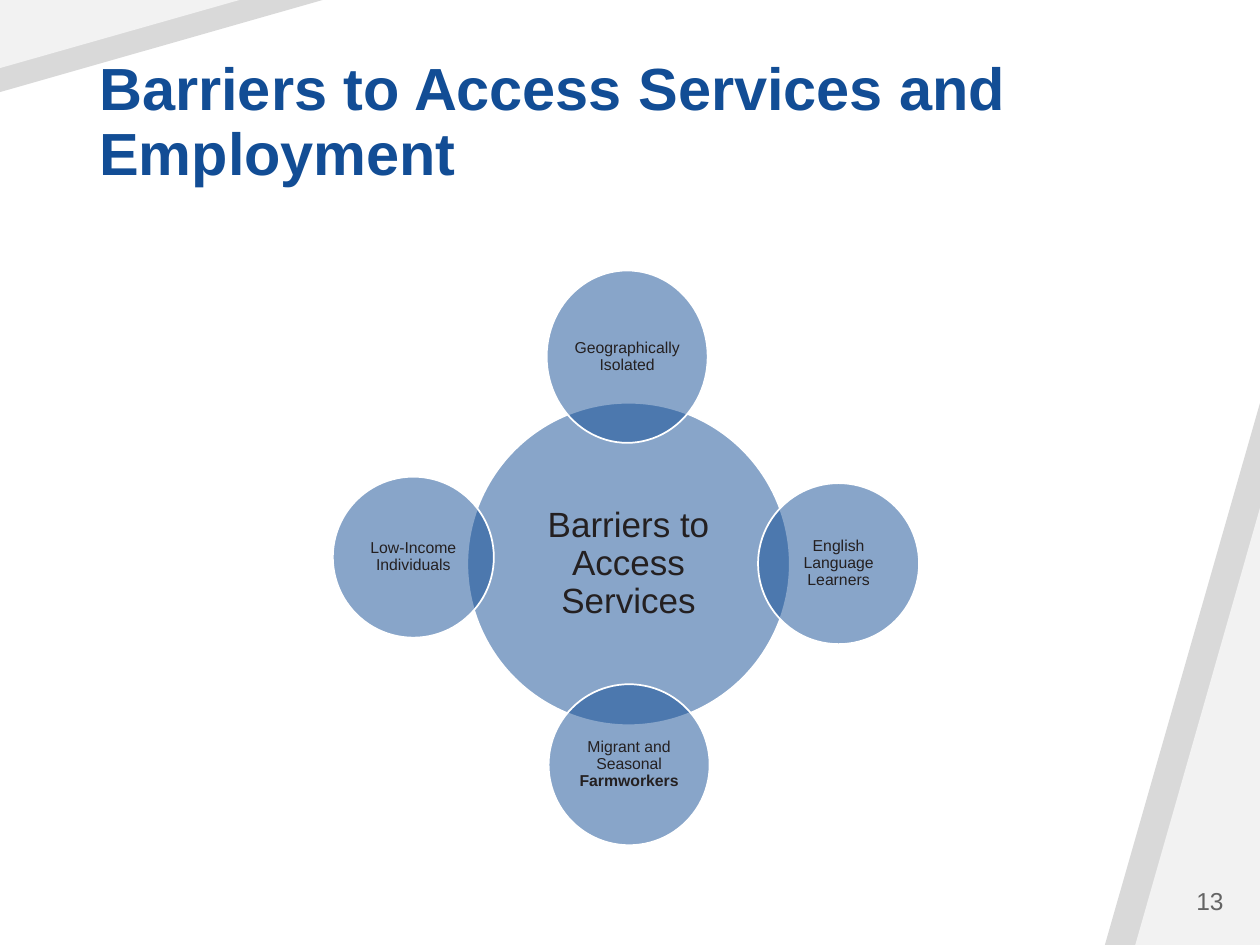
from lxml import etree
from pptx import Presentation
from pptx.dml.color import RGBColor
from pptx.enum.shapes import MSO_SHAPE
from pptx.enum.text import MSO_ANCHOR, PP_ALIGN
from pptx.oxml.ns import qn
from pptx.util import Pt

TRIANGLE, ELLIPSE = MSO_SHAPE.ISOSCELES_TRIANGLE, MSO_SHAPE.OVAL
MIDDLE, BOTTOM = MSO_ANCHOR.MIDDLE, MSO_ANCHOR.BOTTOM
LEFT, CENTER, RIGHT = PP_ALIGN.LEFT, PP_ALIGN.CENTER, PP_ALIGN.RIGHT


class Theme:
    font = "Arial"
    blue, ink, gray = "124D95", "242021", "646464"
    white, band, corner = "FFFFFF", "D9D9D9", "F2F2F2"
    title_size, hub_size, label_size, number_size = 34, 20, 9, 14
    circle_alpha = 50
    outline = 1


PAGE_WIDTH, PAGE_HEIGHT = 720, 540
TITLE = "Barriers to Access Services and Employment"
TITLE_BOX = (49.7, 28.1, 626.4, 82.8)
NUMBER = "13"
NUMBER_BOX = (605.5, 500.4, 100.8, 28.8)

BOTTOM_CORNERS = [(88.6, 309.6, Theme.band), (71.3, 249.8, Theme.corner)]
TOP_CORNERS = [(184.3, 52.6, Theme.band), (136.8, 38.9, Theme.corner)]

HUB = ([("Barriers to Access Services", False)], 359.2, 322.3, 184.3, 184.3)
SATELLITES = [
    ([("Geographically Isolated", False)], 358.4, 203.8, 92, 98.5),
    ([("English Language Learners", False)], 479.2, 322.1, 92, 92),
    ([("Migrant and Seasonal ", False), ("Farmworkers", True)], 359.5, 437, 92, 92),
    ([("Low-Income Individuals", False)], 236.2, 318.4, 92, 92),
]
LABEL_SHARE = 0.71


def color(value):
    return RGBColor.from_string(value)


def add_shape(page, kind, box, fill):
    shape = page.shapes.add_shape(kind, *map(Pt, box))
    shape.shadow.inherit = False
    shape.fill.solid()
    shape.fill.fore_color.rgb = color(fill)
    shape.line.fill.background()
    return shape


def add_corner(page, box, fill, rotation=0):
    triangle = add_shape(page, TRIANGLE, box, fill)
    triangle.adjustments[0] = 1
    triangle.rotation = rotation


def add_text(page, box, spans, size, ink, align, anchor, inset=None, spacing=None):
    text_box = page.shapes.add_textbox(*map(Pt, box))
    frame = text_box.text_frame
    frame.word_wrap = True
    frame.vertical_anchor = anchor
    if inset is not None:
        frame.margin_left = frame.margin_right = Pt(inset)
        frame.margin_top = frame.margin_bottom = Pt(inset)
    para = frame.paragraphs[0]
    para.alignment = align
    para.line_spacing = spacing
    for text, bold in spans:
        span = para.add_run()
        span.text = text
        span.font.name = Theme.font
        span.font.size = Pt(size)
        span.font.bold = bold
        span.font.color.rgb = color(ink)


def centered(x, y, width, height):
    return x - width / 2, y - height / 2, width, height


def add_circle(page, spans, x, y, width, height, size, inset):
    circle = add_shape(page, ELLIPSE, centered(x, y, width, height), Theme.blue)
    circle.line.color.rgb = color(Theme.white)
    circle.line.width = Pt(Theme.outline)
    fill = circle.fill._xPr.find(qn("a:solidFill"))
    etree.SubElement(fill[0], qn("a:alpha"), val=str(Theme.circle_alpha * 1000))
    label_box = centered(x, y, width * LABEL_SHARE, height * LABEL_SHARE)
    add_text(page, label_box, spans, size, Theme.ink, CENTER, MIDDLE, inset, 0.9)


def main():
    deck = Presentation()
    deck.slide_width, deck.slide_height = Pt(PAGE_WIDTH), Pt(PAGE_HEIGHT)
    page = deck.slides.add_slide(deck.slide_layouts[6])

    for width, height, fill in BOTTOM_CORNERS:
        box = (PAGE_WIDTH - width, PAGE_HEIGHT - height, width, height)
        add_corner(page, box, fill)
    for width, height, fill in TOP_CORNERS:
        add_corner(page, (0, 0, width, height), fill, 180)

    add_text(page, TITLE_BOX, [(TITLE, True)], Theme.title_size, Theme.blue,
             LEFT, BOTTOM, spacing=0.9)
    add_text(page, NUMBER_BOX, [(NUMBER, False)], Theme.number_size, Theme.gray,
             RIGHT, MIDDLE)

    add_circle(page, *HUB, Theme.hub_size, 2)
    for satellite in SATELLITES:
        add_circle(page, *satellite, Theme.label_size, 0.9)

    deck.save("out.pptx")


if __name__ == "__main__":
    main()
